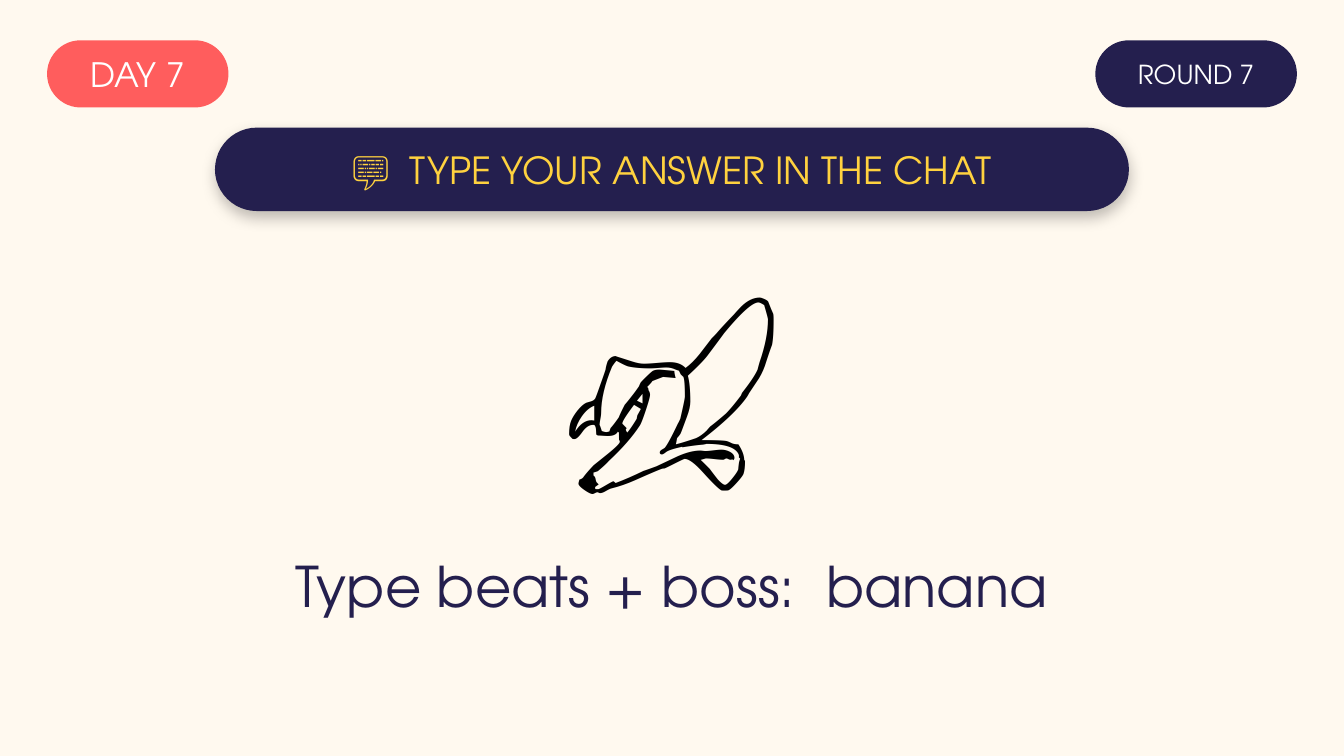
from dataclasses import dataclass

from lxml.etree import SubElement
from pptx import Presentation
from pptx.dml.color import RGBColor
from pptx.enum.shapes import MSO_SHAPE
from pptx.enum.text import MSO_ANCHOR, MSO_AUTO_SIZE, PP_ALIGN
from pptx.oxml import parse_xml
from pptx.oxml.ns import nsdecls
from pptx.util import Pt


@dataclass(frozen=True)
class Theme:
    cream: str = "FFF9EF"
    coral: str = "FF5D5D"
    navy: str = "241F4E"
    yellow: str = "FFD23F"
    white: str = "FFFFFF"
    black: str = "000000"
    font: str = "TeX Gyre Adventor"
    emoji_font: str = "Calibri"
    round_size: int = 14
    day_size: int = 18
    banner_size: int = 20
    prompt_size: int = 30
    emoji_size: int = 122


theme = Theme()


def write(frame, text, size, color, font=theme.font, anchor=MSO_ANCHOR.MIDDLE):
    """Put one centred run into a text frame."""
    frame.word_wrap = True
    frame.auto_size = MSO_AUTO_SIZE.NONE
    frame.vertical_anchor = anchor
    line = frame.paragraphs[0]
    line.alignment = PP_ALIGN.CENTER
    run = line.add_run()
    run.text = text
    run.font.name = font
    run.font.size = Pt(size)
    run.font.color.rgb = RGBColor.from_string(color)


deck = Presentation()
deck.slide_width, deck.slide_height = Pt(720), Pt(405)
slide = deck.slides.add_slide(deck.slide_layouts[5])
slide.background.fill.solid()
slide.background.fill.fore_color.rgb = RGBColor.from_string(theme.cream)

# Day, round and instruction pills
pills = [
    ("DAY 7", (25.2, 21.6, 97.2, 36), theme.coral, theme.white, theme.day_size),
    ("ROUND 7", (586.8, 21.6, 108, 36), theme.navy, theme.white, theme.round_size),
    ("💬  TYPE YOUR ANSWER IN THE CHAT", (115.2, 68.4, 489.6, 44.64),
     theme.navy, theme.yellow, theme.banner_size),
]
for label, box, fill, color, size in pills:
    pill = slide.shapes.add_shape(MSO_SHAPE.ROUNDED_RECTANGLE, *map(Pt, box))
    pill.adjustments[0] = 0.5
    pill.shadow.inherit = False
    pill.fill.solid()
    pill.fill.fore_color.rgb = RGBColor.from_string(fill)
    pill.line.fill.background()
    frame = pill.text_frame
    frame.margin_left = frame.margin_right = frame.margin_top = frame.margin_bottom = 0
    write(frame, label, size, color)

# The instruction banner, last of the pills, casts a soft shadow downwards
banner_effects = pill.element.spPr.find(
    "{http://schemas.openxmlformats.org/drawingml/2006/main}effectLst")
banner_effects.append(parse_xml(
    f'<a:outerShdw {nsdecls("a")} blurRad="{Pt(8)}" dist="{Pt(3)}" dir="5400000" '
    f'algn="bl" rotWithShape="0"><a:srgbClr val="{theme.black}">'
    '<a:alpha val="25000"/></a:srgbClr></a:outerShdw>'))

# Emoji clue
clue = slide.shapes.add_textbox(Pt(0), Pt(122.4), Pt(720), Pt(133.2))
write(clue.text_frame, "🍌", theme.emoji_size, theme.black,
      theme.emoji_font, MSO_ANCHOR.TOP)

# Prompt
prompt = slide.shapes.title
prompt.left, prompt.top, prompt.width, prompt.height = map(Pt, (36, 277.2, 648, 72))
write(prompt.text_frame, "Type beats + boss:  banana", theme.prompt_size, theme.navy)

deck.save("out.pptx")
